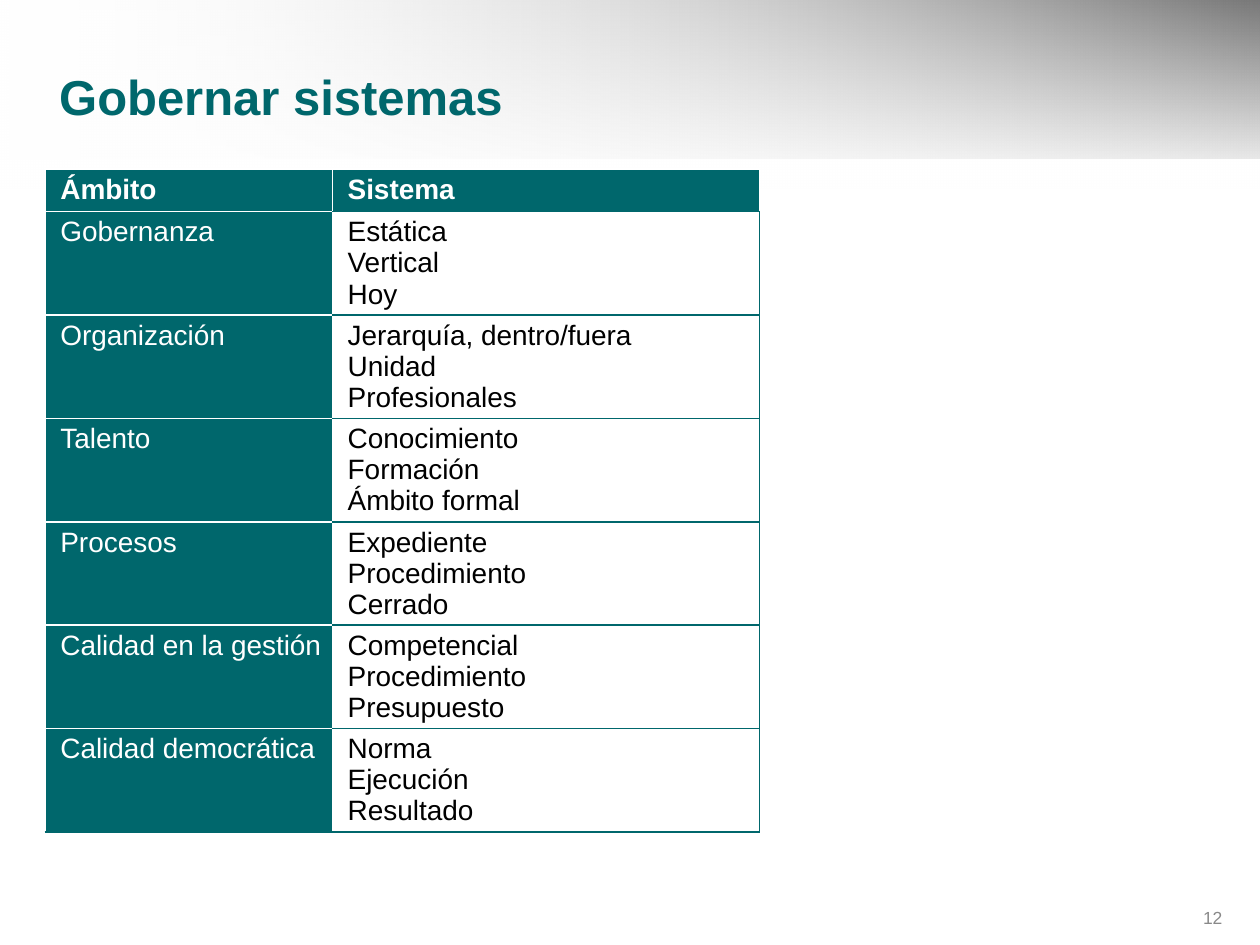
from lxml import etree
from pptx import Presentation
from pptx.dml.color import RGBColor
from pptx.enum.shapes import MSO_SHAPE as Shape
from pptx.enum.text import MSO_ANCHOR as Anchor, PP_ALIGN as Align
from pptx.oxml import parse_xml
from pptx.oxml.ns import nsdecls, qn
from pptx.util import Inches, Pt

COLORS = {"teal": "00676C", "white": "FFFFFF", "black": "000000", "gray": "898989"}
ROWS = [
    ("Ámbito", ["Sistema"]),
    ("Gobernanza", ["Estática", "Vertical", "Hoy"]),
    ("Organización", ["Jerarquía, dentro/fuera", "Unidad", "Profesionales"]),
    ("Talento", ["Conocimiento", "Formación", "Ámbito formal"]),
    ("Procesos", ["Expediente", "Procedimiento", "Cerrado"]),
    ("Calidad en la gestión", ["Competencial", "Procedimiento", "Presupuesto"]),
    ("Calidad democrática", ["Norma", "Ejecución", "Resultado"]),
]
BANDS = [
    (1.26, 0, [("white", 0), ("black", 100)]),
    (1.5, 90, [("white", 47), ("white", 100)]),
]


def style(paragraph, size, color, bold=False):
    font = paragraph.font
    font.name, font.size, font.bold = "Arial", Pt(size), bold
    font.color.rgb = RGBColor.from_string(COLORS[color])


def set_borders(cell, edges):
    for index, (side, color) in enumerate(edges.items()):
        cell._tc.get_or_add_tcPr().insert(index, parse_xml(
            f'<a:ln{side} {nsdecls("a")} w="12700"><a:solidFill>'
            f'<a:srgbClr val="{COLORS[color]}"/></a:solidFill></a:ln{side}>'))


prs = Presentation()
prs.slide_width, prs.slide_height = Inches(10), Inches(7.5)
slide = prs.slides.add_slide(prs.slide_layouts[5])
shapes = slide.shapes

for order, (height, angle, stops) in enumerate(BANDS):
    band = shapes.add_shape(Shape.RECTANGLE, 0, 0, prs.slide_width, Inches(height))
    band.shadow.inherit = False
    band.line.fill.background()
    band.fill.gradient()
    gradient = band._element.spPr.find(qn("a:gradFill"))
    stop_list = gradient.find(qn("a:gsLst"))
    for old_stop in list(stop_list):
        stop_list.remove(old_stop)
    for position, (color, alpha) in zip((0, 100000), stops):
        stop = etree.SubElement(stop_list, qn("a:gs"), pos=str(position))
        tone = etree.SubElement(stop, qn("a:srgbClr"), val=COLORS[color])
        etree.SubElement(tone, qn("a:alpha"), val=str(alpha * 1000))
    gradient.find(qn("a:lin")).set("ang", str(angle * 60000))
    shapes._spTree.insert(2 + order, band._element)

title = shapes.title
title.left, title.top = Inches(0.37), Inches(0.45)
title.width, title.height = Inches(9.2), Inches(0.63)
title.text_frame.text = "Gobernar sistemas"
title.text_frame.vertical_anchor = Anchor.MIDDLE
heading = title.text_frame.paragraphs[0]
heading.alignment = Align.LEFT
style(heading, 28, "teal", True)

row_heights = [0.34] + [0.82] * (len(ROWS) - 1)
table = shapes.add_table(len(ROWS), 2, Inches(0.36), Inches(1.34),
                         Inches(5.67), Inches(sum(row_heights))).table
table.horz_banding = False
for column, width in zip(table.columns, (2.28, 3.39)):
    column.width = Inches(width)

for r, (scope, system) in enumerate(ROWS):
    table.rows[r].height = Inches(row_heights[r])
    header = r == 0
    for c, lines in enumerate(([scope], system)):
        cell = table.cell(r, c)
        dark = header or c == 0
        cell.text = "\n".join(lines)
        cell.margin_left, cell.margin_right = Inches(0.12), Inches(0.08)
        cell.margin_top = cell.margin_bottom = Inches(0.04)
        cell.fill.solid()
        cell.fill.fore_color.rgb = RGBColor.from_string(COLORS["teal" if dark else "white"])
        for paragraph in cell.text_frame.paragraphs:
            style(paragraph, 16, "white" if dark else "black", header)
        edge = "white" if dark else "teal"
        last_dark = c == 0 and r == len(ROWS) - 1
        below = "teal" if c == 1 or last_dark else "white"
        top = "teal" if c == 1 and not header else "white"
        set_borders(cell, {"L": "white", "R": edge, "T": top, "B": below})

page = shapes.add_textbox(Inches(9.17), Inches(7.14), Inches(0.63), Inches(0.29)).text_frame
page.word_wrap = True
page.vertical_anchor = Anchor.MIDDLE
page.text = "12"
page.paragraphs[0].alignment = Align.RIGHT
style(page.paragraphs[0], 10, "gray")

prs.save("out.pptx")
